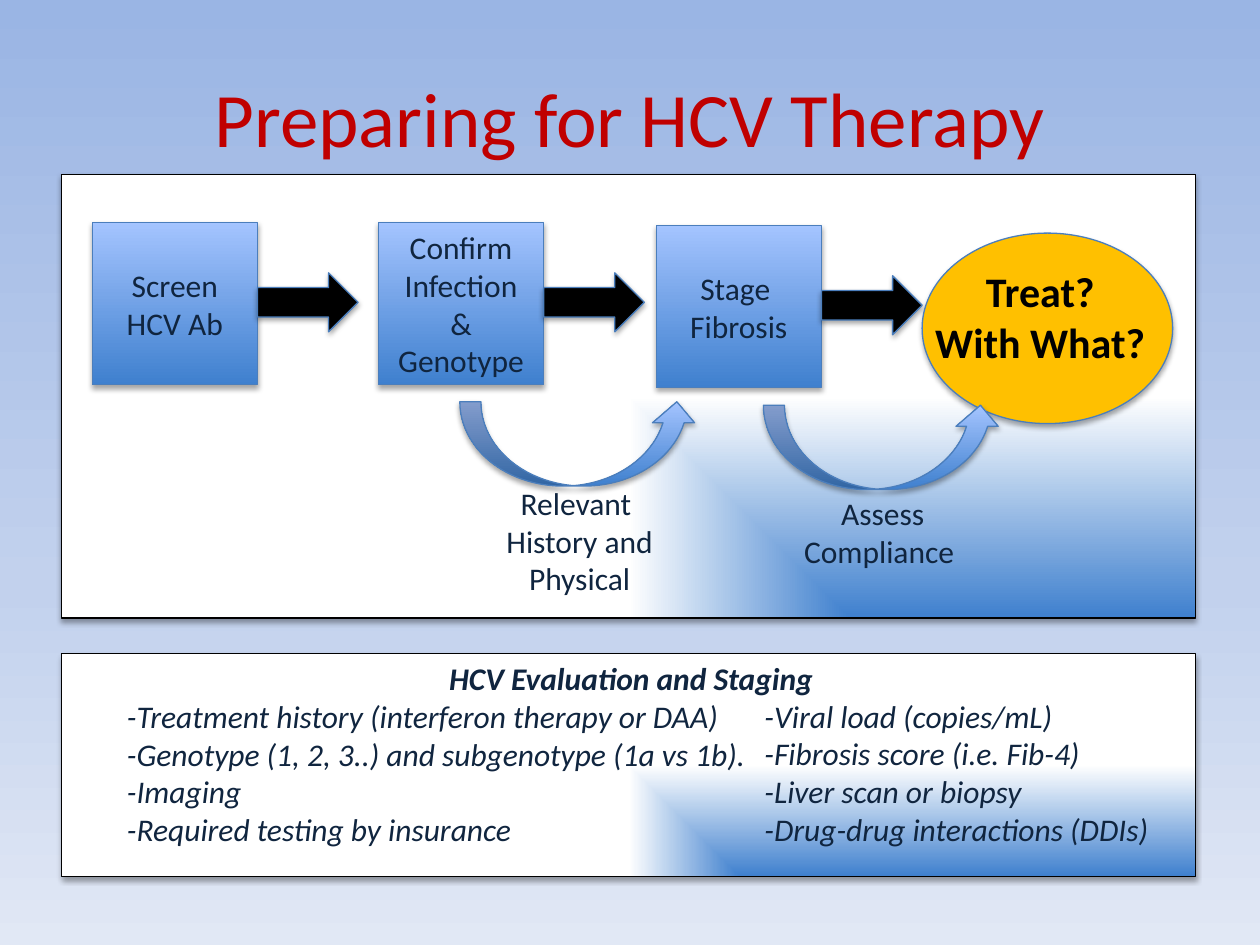
from pptx import Presentation, util as u
from pptx.dml.color import RGBColor
from pptx.enum import shapes, text
from pptx.oxml import parse_xml

NS = ('xmlns:a="http://schemas.openxmlformats.org/drawingml/2006/main" '
      'xmlns:p="http://schemas.openxmlformats.org/presentationml/2006/main"')
KIND = shapes.MSO_SHAPE
MID = text.MSO_ANCHOR.MIDDLE
TOP = text.MSO_ANCHOR.TOP

# Theme: colours, gradients (stops, direction) and type sizes
BOTTOM_UP = '<a:lin ang="16200000" scaled="0"/>'
TOP_DOWN = '<a:lin ang="5400000" scaled="0"/>'
CORNER = '<a:path path="rect"><a:fillToRect l="100000" t="100000"/></a:path>'
THEME = {
    "font": "Calibri", "head": 44, "big": 24, "body": 18,
    "red": "C00000", "navy": "10253F", "black": "000000",
    "gold": "FFC000", "edge": "4B7EBC",
    "sky": ([(0, "9AB5E4"), (62, "C2D1ED"), (100, "E1E8F5")], TOP_DOWN),
    "blue": ([(0, "3F80CE"), (100, "A4C4FF")], BOTTOM_UP),
    "panel": ([(0, "3F80CE"), (100, "FFFFFF")], CORNER),
}

# Content: places are left, top, width, height in cm
TITLE = "Preparing for HCV Therapy"
PANELS = [(1.24, 3.52, 22.86, 8.94), (1.24, 13.17, 22.86, 4.5)]
STEPS = [  # left, top, lines
    (1.86, 4.48, ["Screen", "HCV Ab"]),
    (7.63, 4.48, ["Confirm Infection", "& Genotype"]),
    (13.23, 4.54, ["Stage ", "Fibrosis"]),
]
GOAL = ["Treat?", "With What?"]
LOOPS = [  # arrow left and top, label place, wrap, lines
    (9.27, 8.1, (9.93, 9.63, 3.51, 2.57), False,
     ["Relevant ", "History and", "Physical"]),
    (15.39, 8.17, (15.65, 9.83, 4.29, 1.8), True,
     ["Assess", "Compliance "]),
]
CHECKS = "HCV Evaluation and Staging"
LEFT = ["-Treatment history (interferon therapy or DAA)",
        "-Genotype (1, 2, 3..) and subgenotype (1a vs 1b).",
        "-Imaging", "-Required testing by insurance"]
RIGHT = ["-Viral load (copies/mL)", "-Fibrosis score (i.e. Fib-4)",
         "-Liver scan or biopsy", "-Drug-drug interactions (DDIs)"]
STEP_W, STEP_H = 3.33, 3.28
ARROW_W, ARROW_H = 2.03, 1.19
ARROW_Y = 1.02  # from the top of a step to the top of its arrow


def cm(place):
    return [u.Cm(v) for v in place]


def grad(name):
    stops, way = THEME[name]
    marks = "".join(f'<a:gs pos="{pos * 1000}"><a:srgbClr val="{hue}"/></a:gs>'
                    for pos, hue in stops)
    return f'<a:gradFill {NS} rotWithShape="1"><a:gsLst>{marks}</a:gsLst>{way}</a:gradFill>'


def draw(slide, kind, place, fill, edge="edge"):
    shape = slide.shapes.add_shape(kind, *cm(place))
    props = shape._element.spPr
    if isinstance(THEME[fill], tuple):
        props.insert(2, parse_xml(grad(fill)))  # right after the geometry
    else:
        shape.fill.solid()
        shape.fill.fore_color.rgb = RGBColor.from_string(THEME[fill])
    shape.line.color.rgb = RGBColor.from_string(THEME[edge])
    shape.line.width = u.Pt(0.75)
    props.append(parse_xml(
        f'<a:effectLst {NS}><a:outerShdw blurRad="39400" dist="22900" dir="5400000" '
        'rotWithShape="0"><a:srgbClr val="000000"><a:alpha val="35000"/></a:srgbClr>'
        '</a:outerShdw></a:effectLst>'))
    return shape


def write(shape, lines, size="body", hue="navy", bold=False, slant=False,
          list_from=None, anchor=TOP, wrap=True):
    """Centre the lines; those from list_from on are indented list lines."""
    frame = shape.text_frame
    frame.word_wrap = wrap
    frame.vertical_anchor = anchor
    for i, line in enumerate(lines):
        para = frame.paragraphs[0] if i == 0 else frame.add_paragraph()
        listed = list_from is not None and i >= list_from
        para.alignment = text.PP_ALIGN.LEFT if listed else text.PP_ALIGN.CENTER
        if listed:
            para.level = 1
            props = para._p.get_or_add_pPr()
            props.set("marL", str(u.Cm(1.27)))
            props.set("indent", "0")
        run = para.add_run()
        run.text = line
        font = run.font
        font.name, font.size = THEME["font"], u.Pt(THEME[size])
        font.color.rgb = RGBColor.from_string(THEME[hue])
        font.bold, font.italic = bold and not listed, slant


def label(slide, place, lines, **style):
    write(slide.shapes.add_textbox(*cm(place)), lines, **style)


def main():
    deck = Presentation()
    deck.slide_width, deck.slide_height = u.Cm(25.4), u.Cm(19.05)
    slide = deck.slides.add_slide(deck.slide_layouts[6])

    # Background and title
    slide.element.cSld.insert(0, parse_xml(
        f'<p:bg {NS}><p:bgPr>{grad("sky")}<a:effectLst/></p:bgPr></p:bg>'))
    label(slide, (1.27, 0.76, 22.86, 3.18), [TITLE], size="head", hue="red",
          anchor=MID)

    # Flow: each step with the arrow that leaves it
    draw(slide, KIND.RECTANGLE, PANELS[0], "panel", "black")
    for x, y, lines in STEPS:
        box = draw(slide, KIND.RECTANGLE, (x, y, STEP_W, STEP_H), "blue")
        write(box, lines, anchor=MID)
        draw(slide, KIND.RIGHT_ARROW,
             (x + STEP_W, y + ARROW_Y, ARROW_W, ARROW_H), "black")

    # Goal
    draw(slide, KIND.OVAL, (18.59, 4.7, 5.05, 3.84), "gold")
    label(slide, (18.57, 5.23, 4.8, 2.31), GOAL, size="big", hue="black",
          bold=True, wrap=False)

    # Curved arrows and their labels
    for x, y, place, wrap, lines in LOOPS:
        draw(slide, KIND.CURVED_UP_ARROW, (x, y, 4.8, 1.7), "blue")
        label(slide, place, lines, wrap=wrap)

    # Evaluation lists
    draw(slide, KIND.RECTANGLE, PANELS[1], "panel", "black")
    label(slide, (1.04, 13.16, 23.37, 4.11), [CHECKS] + LEFT, bold=True,
          slant=True, list_from=1)
    label(slide, (13.89, 13.92, 10.24, 3.33), RIGHT, slant=True, list_from=0)

    deck.save("out.pptx")


if __name__ == "__main__":
    main()
